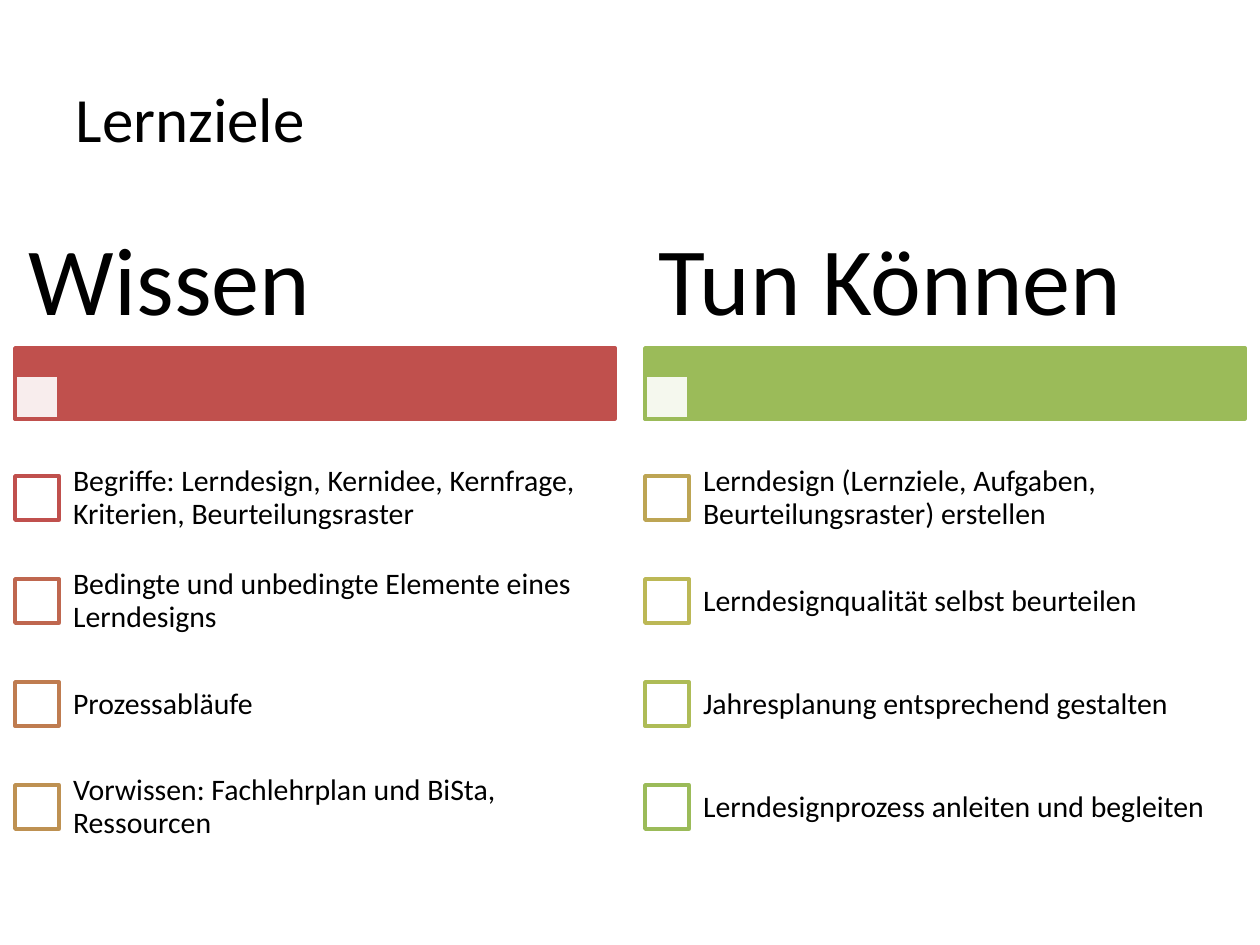
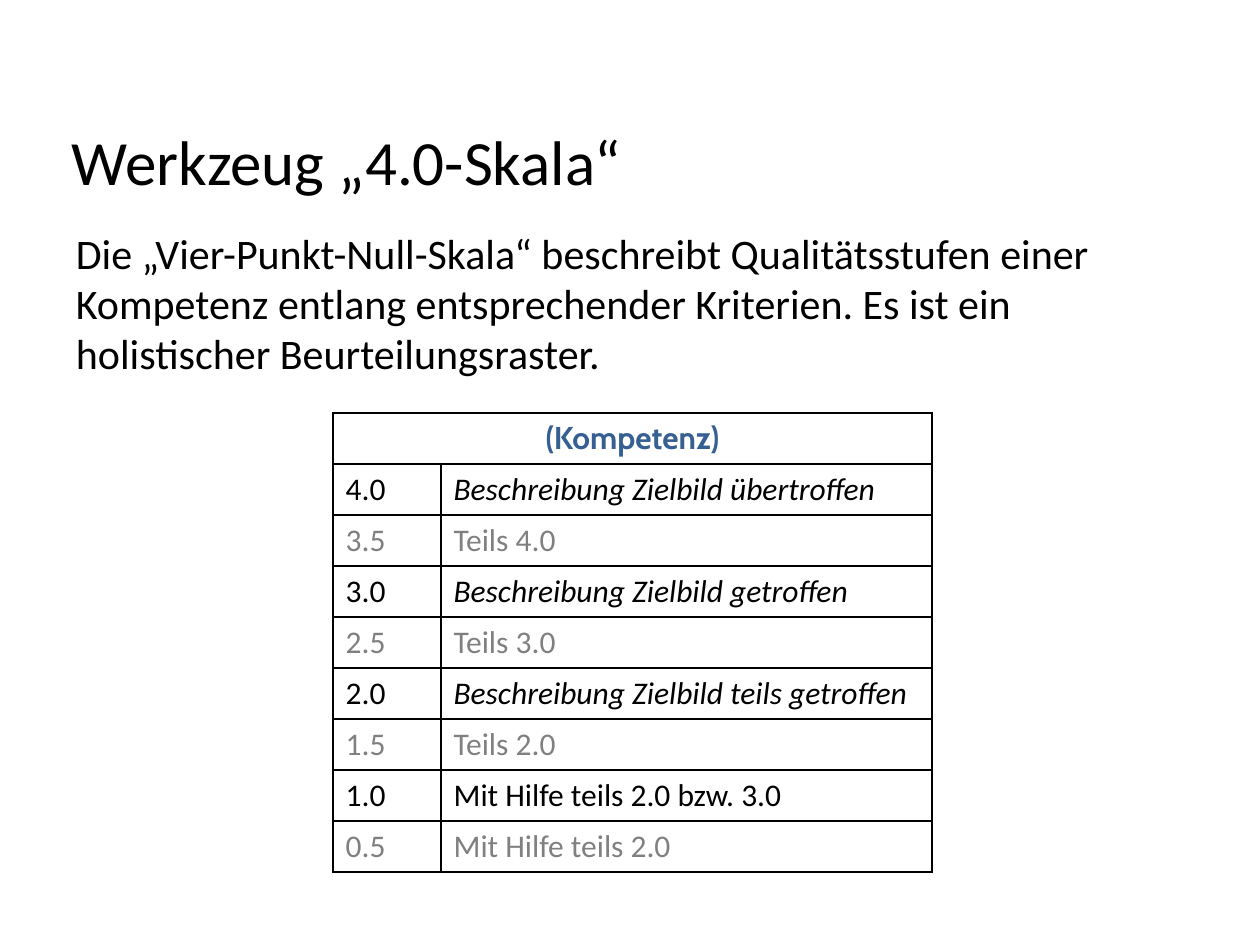
from lxml.etree import SubElement
from pptx import Presentation
from pptx.dml.color import RGBColor
from pptx.enum.shapes import MSO_SHAPE
from pptx.enum.text import MSO_ANCHOR, PP_ALIGN
from pptx.oxml import parse_xml
from pptx.oxml.ns import nsdecls, qn
from pptx.util import Emu, Pt

PX_PER_INCH = 126
BODY_FONT = "Calibri"
HEADER_FONT = "Cabin"
BLACK = RGBColor(0x00, 0x00, 0x00)
WHITE = RGBColor(0xFF, 0xFF, 0xFF)
GREY = RGBColor(0x80, 0x80, 0x80)
BLUE = RGBColor(0x37, 0x60, 0x92)
RED = RGBColor(0xC0, 0x50, 0x4D)
RUST = RGBColor(0xBF, 0x67, 0x4F)
COPPER = RGBColor(0xBF, 0x7C, 0x50)
BRONZE = RGBColor(0xBE, 0x91, 0x52)
GOLD = RGBColor(0xBD, 0xA5, 0x54)
OLIVE = RGBColor(0xBC, 0xB8, 0x56)
LIME = RGBColor(0xAE, 0xBC, 0x57)
GREEN = RGBColor(0x9B, 0xBB, 0x59)

GOAL_COLUMNS = [
    ("Wissen", RED, [
        ("Begriffe: Lerndesign, Kernidee, Kernfrage, Kriterien, Beurteilungsraster", RED),
        ("Bedingte und unbedingte Elemente eines Lerndesigns", RUST),
        ("Prozessabläufe", COPPER),
        ("Vorwissen: Fachlehrplan und BiSta, Ressourcen", BRONZE),
    ]),
    ("Tun Können", GREEN, [
        ("Lerndesign (Lernziele, Aufgaben, Beurteilungsraster) erstellen", GOLD),
        ("Lerndesignqualität selbst beurteilen", OLIVE),
        ("Jahresplanung entsprechend gestalten", LIME),
        ("Lerndesignprozess anleiten und begleiten", GREEN),
    ]),
]
SCALE_LEVELS = [
    ("4.0", "Beschreibung Zielbild übertroffen"),
    ("3.5", "Teils 4.0"),
    ("3.0", "Beschreibung Zielbild getroffen"),
    ("2.5", "Teils 3.0"),
    ("2.0", "Beschreibung Zielbild teils getroffen"),
    ("1.5", "Teils 2.0"),
    ("1.0", "Mit Hilfe teils 2.0 bzw. 3.0"),
    ("0.5", "Mit Hilfe teils 2.0"),
]


def px(length):
    return Emu(round(length * 914400 / PX_PER_INCH))


def px_box(*lengths):
    return [px(length) for length in lengths]


def style_text(frame, size, color=BLACK, font=BODY_FONT, bold=False, italic=False):
    for paragraph in frame.paragraphs:
        for run in paragraph.runs:
            run.font.name = font
            run.font.size = Pt(size)
            run.font.color.rgb = color
            run.font.bold = bold
            run.font.italic = italic


def add_titled_slide(deck, text, box):
    slide = deck.slides.add_slide(deck.slide_layouts[5])
    title = slide.shapes.title
    title.left, title.top, title.width, title.height = px_box(*box)
    frame = title.text_frame
    frame.text = text
    frame.vertical_anchor = MSO_ANCHOR.MIDDLE
    frame.paragraphs[0].alignment = PP_ALIGN.LEFT
    style_text(frame, 36)
    return slide


def add_text(slide, text, box, size, insets=(13, 6), anchor=MSO_ANCHOR.MIDDLE, spacing=0.9):
    frame = slide.shapes.add_textbox(*px_box(*box)).text_frame
    frame.word_wrap = True
    frame.vertical_anchor = anchor
    frame.margin_left = frame.margin_right = px(insets[0])
    frame.margin_top = frame.margin_bottom = px(insets[1])
    frame.text = text
    frame.paragraphs[0].line_spacing = spacing
    style_text(frame, size)


def add_rect(slide, box, fill, line, opacity=100):
    rect = slide.shapes.add_shape(MSO_SHAPE.RECTANGLE, *px_box(*box))
    rect.shadow.inherit = False
    rect.fill.solid()
    rect.fill.fore_color.rgb = fill
    rect.line.color.rgb = line
    rect.line.width = Pt(2)
    if opacity < 100:
        fill_color = rect.fill._xPr.find(qn("a:solidFill"))[0]
        SubElement(fill_color, qn("a:alpha"), val=str(opacity * 1000))


def add_goal_column(slide, box, heading, accent, goals):
    left, top, width, height = box
    heading_height, band_height, checkbox, indent = 127, 71, 44, 42
    goals_offset = 226
    row_height = (height - goals_offset) // len(goals)
    band_top = top + heading_height
    add_rect(slide, (left, band_top, width, band_height), accent, accent)
    add_rect(slide, (left, band_top + band_height - checkbox, checkbox, checkbox),
             WHITE, accent, opacity=90)
    add_text(slide, heading, (left, top, width, heading_height), 55, (14, 10))
    for index, (goal, color) in enumerate(goals):
        row_top = top + goals_offset + index * row_height
        checkbox_top = row_top + (row_height - checkbox) // 2
        add_rect(slide, (left, checkbox_top, checkbox, checkbox), WHITE, color)
        add_text(slide, goal, (left + indent, row_top, width - indent, row_height), 17, (16, 16))


def border_cell(cell):
    properties = cell._tc.get_or_add_tcPr()
    for index, side in enumerate("LRTB"):
        properties.insert(index, parse_xml(
            f'<a:ln{side} {nsdecls("a")} w="12700"><a:solidFill>'
            f'<a:srgbClr val="{BLACK}"/></a:solidFill></a:ln{side}>'))


def add_scale_table(slide, box, header, levels):
    row_count = len(levels) + 1
    table = slide.shapes.add_table(row_count, 2, *px_box(*box)).table
    table.first_row = table.horz_banding = False
    level_width = 108
    table.columns[0].width = px(level_width)
    table.columns[1].width = px(box[2] - level_width)
    for row in table.rows:
        row.height = px(box[3] // row_count)
        for cell in row.cells:
            cell.fill.background()
            border_cell(cell)
    header_cell = table.cell(0, 0)
    header_cell.merge(table.cell(0, 1))
    header_cell.text_frame.text = header
    header_cell.text_frame.paragraphs[0].alignment = PP_ALIGN.CENTER
    style_text(header_cell.text_frame, 18, BLUE, HEADER_FONT, bold=True)
    for row_index, level in enumerate(levels, 1):
        color = BLACK if level[0].endswith(".0") else GREY
        for column, text in enumerate(level):
            frame = table.cell(row_index, column).text_frame
            frame.text = text
            style_text(frame, 18, color, italic=text.startswith("Beschreibung"))


def build_goals_slide(deck):
    slide = add_titled_slide(deck, "Lernziele", (63, 38, 905, 158))
    column_width, gap = 600, 30
    for index, (heading, accent, goals) in enumerate(GOAL_COLUMNS):
        left = 15 + index * (column_width + gap)
        add_goal_column(slide, (left, 221, column_width, 638), heading, accent, goals)


def build_scale_slide(deck):
    slide = add_titled_slide(deck, "Werkzeug „4.0-Skala“", (59, 108, 857, 105))
    add_text(slide, "Die „Vier-Punkt-Null-Skala“ beschreibt Qualitätsstufen einer Kompetenz "
             "entlang entsprechender Kriterien. Es ist ein holistischer Beurteilungsraster.",
             (63, 221, 1134, 624), 24, anchor=MSO_ANCHOR.TOP, spacing=1.0)
    add_scale_table(slide, (333, 413, 599, 459), "(Kompetenz)", SCALE_LEVELS)


def main():
    deck = Presentation()
    deck.slide_width, deck.slide_height = px_box(1260, 945)
    build_goals_slide(deck)
    build_scale_slide(deck)
    deck.save("out.pptx")


if __name__ == "__main__":
    main()
